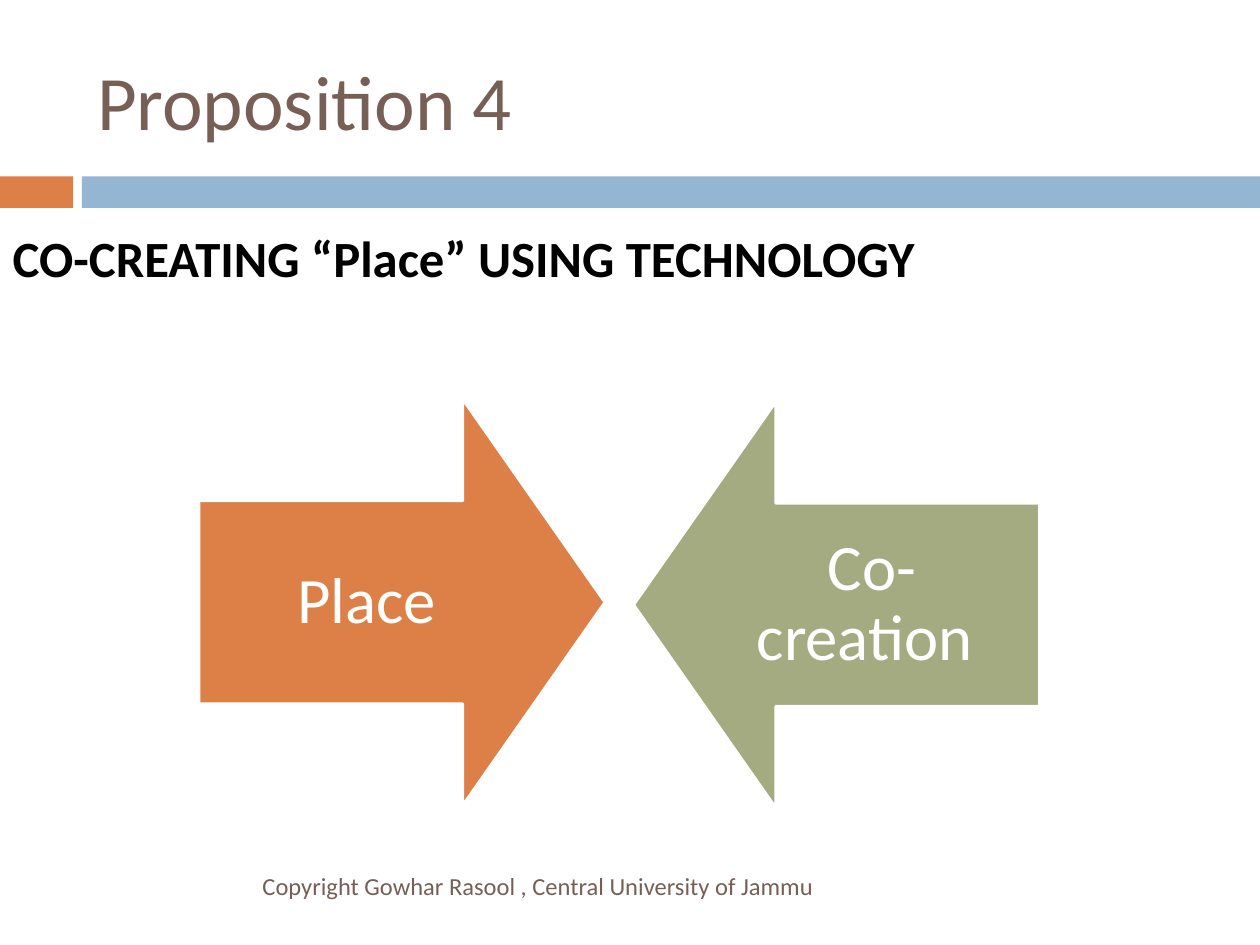
from dataclasses import dataclass

from pptx import Presentation
from pptx.dml.color import RGBColor
from pptx.enum import shapes, text
from pptx.oxml import xmlchemy
from pptx.util import Inches, Pt

ORANGE = RGBColor(0xDD, 0x80, 0x47)
BLUE = RGBColor(0x94, 0xB6, 0xD2)
GREEN = RGBColor(0xA5, 0xAB, 0x81)
BROWN = RGBColor(0x77, 0x5F, 0x55)
BLACK = RGBColor(0, 0, 0)
WHITE = RGBColor(0xFF, 0xFF, 0xFF)
ARROW_SIZE = 3.22
LABEL_WIDTH = 2.66
LABEL_HEIGHT = 1.61


@dataclass
class Band:
    left: float
    width: float
    color: RGBColor


@dataclass
class Arrow:
    label: str
    left: float
    top: float
    rotation: int
    color: RGBColor
    label_offset: float


BANDS = [Band(0, 0.58, ORANGE), Band(0.65, 9.35, BLUE)]
ARROWS = [
    Arrow("Place", 1.58, 3.17, 270, ORANGE, 0),
    Arrow("Co-creation ", 5.03, 3.19, 90, GREEN, ARROW_SIZE - LABEL_WIDTH),
]


def place(shape, left: float, top: float, width: float, height: float) -> None:
    bounds = {"left": left, "top": top, "width": width, "height": height}
    for name, value in bounds.items():
        setattr(shape, name, Inches(value))


def write(shape, words: str, size: int, color: RGBColor, anchor, align,
          inset: float | None = None, bold: bool = False):
    """Fill the shape with one formatted paragraph and return the paragraph."""
    frame = shape.text_frame
    frame.word_wrap = True
    frame.auto_size = text.MSO_AUTO_SIZE.NONE
    frame.vertical_anchor = anchor
    if inset is not None:
        for side in ("left", "top", "right", "bottom"):
            setattr(frame, f"margin_{side}", Inches(inset))
    para = frame.paragraphs[0]
    para.alignment = align
    span = para.add_run()
    span.text = words
    for name, value in {"name": "Calibri", "size": Pt(size), "bold": bold}.items():
        setattr(span.font, name, value)
    span.font.color.rgb = color
    return para


def draw_band(page, band: Band) -> None:
    bar = page.shapes.add_shape(
        shapes.MSO_SHAPE.RECTANGLE, Inches(band.left), Inches(1.4),
        Inches(band.width), Inches(0.25))
    bar.shadow.inherit = False
    bar.fill.solid()
    bar.fill.fore_color.rgb = band.color
    bar.line.fill.background()


def draw_arrow(page, arrow: Arrow) -> None:
    shape = page.shapes.add_shape(
        shapes.MSO_SHAPE.DOWN_ARROW, Inches(arrow.left), Inches(arrow.top),
        Inches(ARROW_SIZE), Inches(ARROW_SIZE))
    shape.rotation = arrow.rotation
    shape.adjustments[0] = 0.5
    shape.adjustments[1] = 0.35
    shape.shadow.inherit = False
    shape.fill.solid()
    shape.fill.fore_color.rgb = arrow.color
    shape.line.color.rgb = WHITE
    shape.line.width = Pt(1.5)

    label = page.shapes.add_textbox(
        Inches(arrow.left + arrow.label_offset),
        Inches(arrow.top + (ARROW_SIZE - LABEL_HEIGHT) / 2),
        Inches(LABEL_WIDTH), Inches(LABEL_HEIGHT))
    para = write(label, arrow.label, 37, WHITE, text.MSO_ANCHOR.MIDDLE,
                 text.PP_ALIGN.CENTER, inset=0.29)
    para.line_spacing = 0.9


def hang_without_bullet(para, indent: float) -> None:
    properties = para._p.get_or_add_pPr()
    properties.set("marL", str(Inches(indent)))
    properties.set("indent", str(-Inches(indent)))
    properties.append(xmlchemy.OxmlElement("a:buNone"))


def main() -> None:
    deck = Presentation()
    deck.slide_width, deck.slide_height = Inches(10), Inches(7.5)
    page = deck.slides.add_slide(deck.slide_layouts[1])

    for band in BANDS:
        draw_band(page, band)

    title, body = page.placeholders
    place(title, 0.67, 0.25, 8.92, 1.08)
    write(title, "Proposition 4", 44, BROWN, text.MSO_ANCHOR.MIDDLE,
          text.PP_ALIGN.LEFT)
    place(body, 0, 1.75, 9.67, 5)
    para = write(body, "CO-CREATING “Place” USING TECHNOLOGY", 29, BLACK,
                 text.MSO_ANCHOR.TOP, text.PP_ALIGN.LEFT, bold=True)
    para.space_before = Pt(7)
    hang_without_bullet(para, 0.35)

    for arrow in ARROWS:
        draw_arrow(page, arrow)

    footer = page.shapes.add_textbox(
        Inches(0.67), Inches(6.83), Inches(5.93), Inches(0.4))
    write(footer, "Copyright Gowhar Rasool , Central University of Jammu ", 14,
          BROWN, text.MSO_ANCHOR.MIDDLE, text.PP_ALIGN.RIGHT)

    deck.save("out.pptx")


if __name__ == "__main__":
    main()
